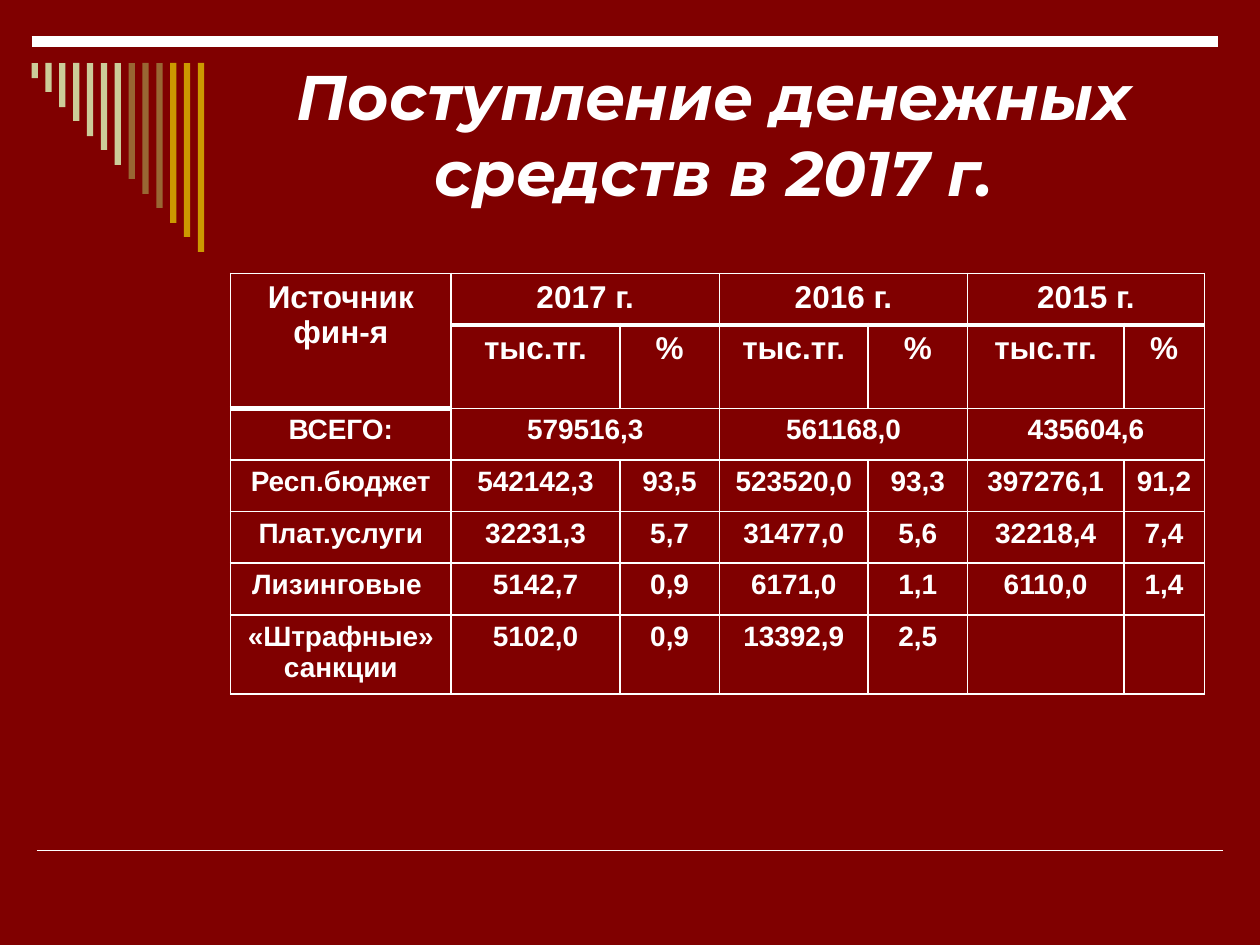
from dataclasses import dataclass

from lxml.etree import SubElement
from pptx import Presentation
from pptx.dml.color import RGBColor
from pptx.enum.shapes import MSO_CONNECTOR, MSO_SHAPE
from pptx.enum.text import MSO_ANCHOR, PP_ALIGN
from pptx.oxml.ns import qn
from pptx.util import Pt

PX = 9144  # EMU in one px: 100 px to the inch


@dataclass(frozen=True)
class Theme:
    background: str = "800000"
    ink: str = "FFFFFF"
    sand: str = "CCCC99"
    brown: str = "996633"
    gold: str = "CC9900"
    title_font: str = "Montserrat"
    table_font: str = "Arial"
    title_size: int = 36
    header_size: int = 18
    body_size: int = 16
    thin: int = 1
    heavy: int = 3
    band: int = 6


THEME = Theme()

TITLE = "Поступление денежных средств в 2017 г."
COLUMN_WIDTHS = [175, 134, 79, 118, 79, 124, 64]
ROW_HEIGHTS = [41] * 6 + [63]
HEADER_ROWS = 2
ROWS = [
    ["Источник фин-я", "2017 г.", "", "2016 г.", "", "2015 г.", ""],
    [""] + ["тыс.тг.", "%"] * 3,
    ["ВСЕГО:", "579516,3", "", "561168,0", "", "435604,6", ""],
    ["Респ.бюджет", "542142,3", "93,5", "523520,0", "93,3", "397276,1", "91,2"],
    ["Плат.услуги", "32231,3", "5,7", "31477,0", "5,6", "32218,4", "7,4"],
    ["Лизинговые ", "5142,7", "0,9", "6171,0", "1,1", "6110,0", "1,4"],
    ["«Штрафные» санкции", "5102,0", "0,9", "13392,9", "2,5", "", ""],
]


def emu(*lengths):
    return [length * PX for length in lengths]


def color(value):
    return RGBColor.from_string(value)


def format_paragraph(paragraph, font_name, size, italic=False):
    paragraph.alignment = PP_ALIGN.CENTER
    font = paragraph.font
    font.name = font_name
    font.size = Pt(size)
    font.bold = True
    font.italic = italic
    font.color.rgb = color(THEME.ink)


def add_rule(slide, left, top, width, weight):
    rule = slide.shapes.add_connector(
        MSO_CONNECTOR.STRAIGHT, *emu(left, top, left + width, top))
    rule.line.color.rgb = color(THEME.ink)
    rule.line.width = Pt(weight)
    SubElement(rule._element.spPr, qn("a:effectLst"))


def add_bars(slide, left, top, height):
    """Hang a row of bars that grow evenly to the given height."""
    colors = [THEME.sand] * 7 + [THEME.brown] * 3 + [THEME.gold] * 3
    pitch, width = 11, 5
    group = slide.shapes.add_group_shape()
    for index, fill in enumerate(colors):
        bar_height = round(height * (index + 1) / len(colors))
        bar = group.shapes.add_shape(
            MSO_SHAPE.RECTANGLE,
            *emu(left + index * pitch, top, width, bar_height))
        bar.shadow.inherit = False
        bar.fill.solid()
        bar.fill.fore_color.rgb = color(fill)
        bar.line.fill.background()


def place_title(slide, left, top, width, height):
    title = slide.shapes.title
    title.left, title.top, title.width, title.height = emu(left, top, width, height)
    frame = title.text_frame
    frame.text = TITLE
    frame.word_wrap = True
    frame.vertical_anchor = MSO_ANCHOR.MIDDLE
    format_paragraph(frame.paragraphs[0], THEME.title_font, THEME.title_size, italic=True)


def bottom_weight(row, column):
    """The header's lower edges are heavy, and so is the one under its tall cell."""
    is_heavy = row == 0 or (row, column) == (1, 0)
    return THEME.heavy if is_heavy else THEME.thin


def set_borders(cell, row, column):
    weights = {
        "a:lnL": THEME.thin,
        "a:lnR": THEME.thin,
        "a:lnT": bottom_weight(row - 1, column),
        "a:lnB": bottom_weight(row, column),
    }
    properties = cell._tc.get_or_add_tcPr()
    for tag, weight in weights.items():
        line = SubElement(properties, qn(tag), w=str(Pt(weight)))
        fill = SubElement(line, qn("a:solidFill"))
        SubElement(fill, qn("a:srgbClr"), val=THEME.ink)


def add_income_table(slide, left, top):
    table = slide.shapes.add_table(
        len(ROWS), len(COLUMN_WIDTHS),
        *emu(left, top, sum(COLUMN_WIDTHS), sum(ROW_HEIGHTS))).table
    table.first_row = table.horz_banding = False
    for column, width in zip(table.columns, COLUMN_WIDTHS):
        column.width = width * PX
    for row, height in zip(table.rows, ROW_HEIGHTS):
        row.height = height * PX

    for row, texts in enumerate(ROWS):
        size = THEME.header_size if row < HEADER_ROWS else THEME.body_size
        for column, text in enumerate(texts):
            cell = table.cell(row, column)
            cell.text = text
            format_paragraph(cell.text_frame.paragraphs[0], THEME.table_font, size)
            set_borders(cell, row, column)
            cell.fill.solid()
            cell.fill.fore_color.rgb = color(THEME.background)

    table.cell(0, 0).merge(table.cell(1, 0))
    for row in (0, 2):
        for column in (1, 3, 5):
            table.cell(row, column).merge(table.cell(row, column + 1))


def build_slide(presentation):
    slide = presentation.slides.add_slide(presentation.slide_layouts[5])
    slide.background.fill.solid()
    slide.background.fill.fore_color.rgb = color(THEME.background)
    add_rule(slide, 29, 675, 942, THEME.thin)
    add_rule(slide, 25, 33, 942, THEME.band)
    add_bars(slide, 25, 50, 150)
    place_title(slide, 183, 50, 767, 112)
    add_income_table(slide, 183, 217)


def main():
    presentation = Presentation()
    presentation.slide_width, presentation.slide_height = emu(1000, 750)
    build_slide(presentation)
    presentation.save("out.pptx")


if __name__ == "__main__":
    main()
